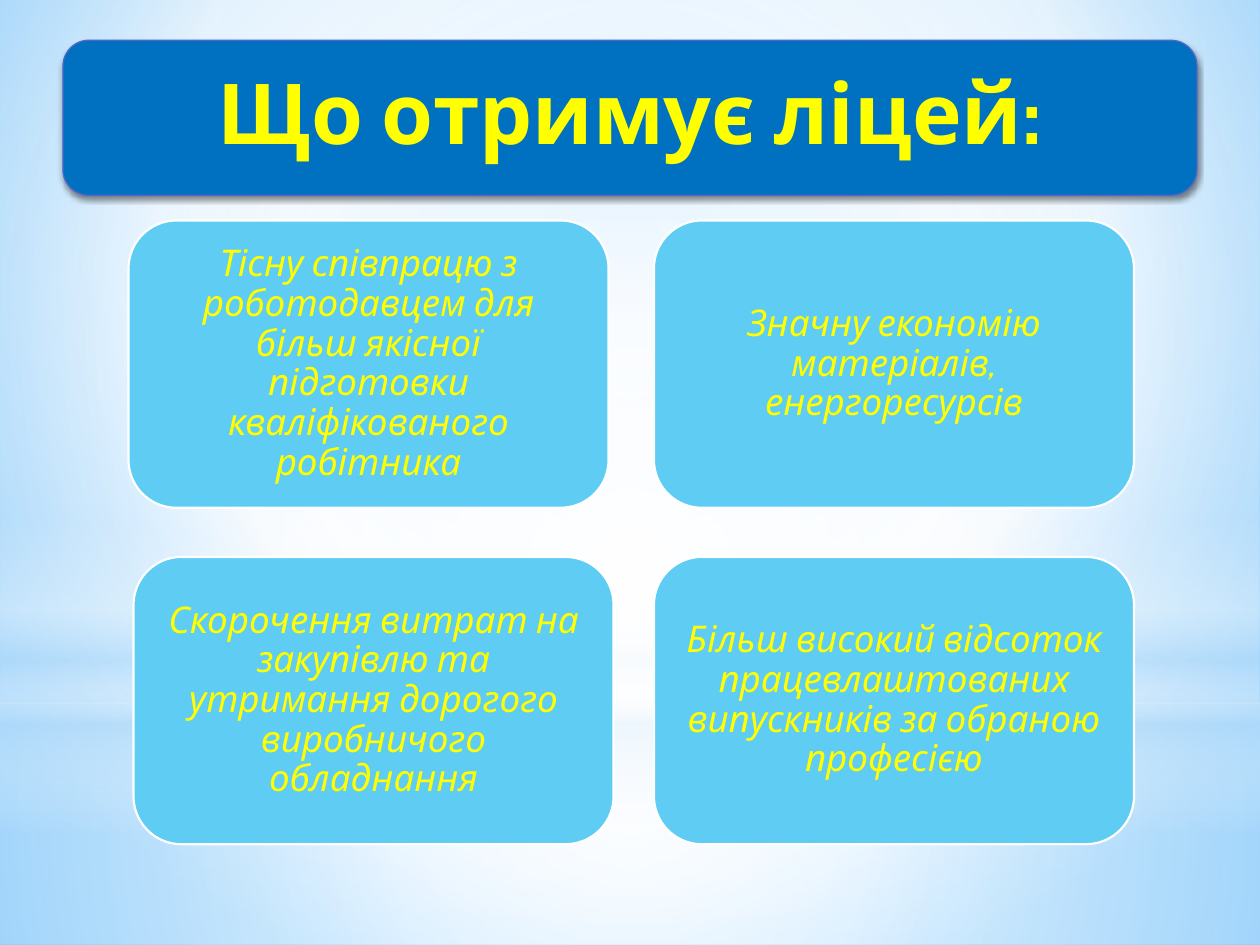
import pptx
import pptx.dml.color
import pptx.enum.shapes
import pptx.enum.text
import pptx.oxml
import pptx.oxml.ns
import pptx.util

RGBColor = pptx.dml.color.RGBColor
Shape = pptx.enum.shapes.MSO_SHAPE

BLUE = RGBColor(0x00, 0x70, 0xC0)
INDIGO = RGBColor(0x4E, 0x67, 0xC8)
SKY = RGBColor(0x5E, 0xCC, 0xF3)
YELLOW = RGBColor(0xFF, 0xFF, 0x00)
WHITE = RGBColor(0xFF, 0xFF, 0xFF)
HAZE = RGBColor(0xB4, 0xDC, 0xFA)
PALE_BLUE = RGBColor(0x9E, 0xD5, 0xFF)
BRIGHT_BLUE = RGBColor(0x5B, 0xB9, 0xFF)

COLUMNS, ROWS = 40, 30
CENTRE = '<a:path path="circle"><a:fillToRect l="50000" t="50000" r="50000" b="50000"/></a:path>'
UPPER = '<a:path path="circle"><a:fillToRect l="20000" t="10000" r="20000" b="60000"/></a:path>'
DOWNWARD = '<a:lin ang="5400000" scaled="0"/>'

GLOWS = [
    (Shape.RECTANGLE, (0, 22.32, 40, 7.68), CENTRE,
     [(0, WHITE, 91), (37, WHITE, 76), (100, HAZE, 79)]),
    (Shape.RECTANGLE, (0, 0, 40, 22.32), CENTRE,
     [(0, WHITE, 89), (48, WHITE, 62), (100, HAZE, 79)]),
    (Shape.RECTANGLE, (0, 16.48, 40, 10), DOWNWARD,
     [(0, WHITE, 0), (29, WHITE, 30), (45, HAZE, 40),
      (55, WHITE, 26), (65, HAZE, 60), (100, WHITE, 0)]),
    (Shape.OVAL, (0, 7, 40, 22.32), CENTRE, [(0, WHITE, 100), (56, WHITE, 0)]),
]

BENEFITS = [
    [(4.08, "Тісну співпрацю з роботодавцем для більш якісної підготовки кваліфікованого робітника"),
     (20.76, "Значну економію матеріалів, енергоресурсів")],
    [(4.24, "Скорочення витрат на закупівлю та утримання дорогого виробничого обладнання"),
     (20.76, "Більш високий відсоток працевлаштованих випускників за обраною професією")],
]
CARD_WIDTH, CARD_HEIGHT = 15.24, 9.12
FIRST_ROW, ROW_PITCH = 7, 10.68


class SlideBuilder:
    """Draws styled elements on one slide, placed in grid columns and rows."""

    font_name = "Cabin"

    def __init__(self, presentation):
        self.slide = presentation.slides.add_slide(presentation.slide_layouts[6])
        self.column = presentation.slide_width / COLUMNS
        self.row = presentation.slide_height / ROWS

    def add_shape(self, kind, box):
        left, top, width, height = box
        shape = self.slide.shapes.add_shape(
            kind, round(left * self.column), round(top * self.row),
            round(width * self.column), round(height * self.row))
        shape.shadow.inherit = False
        return shape

    def apply_gradient(self, fill, element, direction, stops):
        fill.background()
        stop_list = "".join(
            f'<a:gs pos="{position * 1000}"><a:srgbClr val="{color}">'
            f'<a:alpha val="{opacity * 1000}"/></a:srgbClr></a:gs>'
            for position, color, opacity in stops)
        gradient = pptx.oxml.parse_xml(
            f'<a:gradFill {pptx.oxml.ns.nsdecls("a")} rotWithShape="1">'
            f'<a:gsLst>{stop_list}</a:gsLst>{direction}</a:gradFill>')
        empty_fill = element.xpath(".//a:noFill")[0]
        empty_fill.getparent().replace(empty_fill, gradient)

    def set_background(self, direction, stops):
        self.apply_gradient(self.slide.background.fill, self.slide.element, direction, stops)

    def add_glow(self, kind, box, direction, stops):
        shape = self.add_shape(kind, box)
        self.apply_gradient(shape.fill, shape.element, direction, stops)
        shape.line.fill.background()

    def add_panel(self, kind, box, text, fill, line, line_width, size, inset):
        shape = self.add_shape(kind, box)
        shape.fill.solid()
        shape.fill.fore_color.rgb = fill
        shape.line.color.rgb = line
        shape.line.width = pptx.util.Pt(line_width)
        frame = shape.text_frame
        frame.word_wrap = True
        frame.vertical_anchor = pptx.enum.text.MSO_ANCHOR.MIDDLE
        frame.margin_left = frame.margin_right = pptx.util.Inches(inset)
        frame.margin_top = frame.margin_bottom = pptx.util.Inches(inset)
        paragraph = frame.paragraphs[0]
        paragraph.text = text
        paragraph.alignment = pptx.enum.text.PP_ALIGN.CENTER
        paragraph.line_spacing = 0.9
        paragraph.font.name = self.font_name
        paragraph.font.size = pptx.util.Pt(size)
        paragraph.font.color.rgb = YELLOW
        return shape

    def add_title(self, box, text):
        shape = self.add_panel(Shape.ROUNDED_RECTANGLE, box, text, BLUE, INDIGO, 0.75, 48, 0.2)
        shape.text_frame.paragraphs[0].font.bold = True
        shadow = pptx.oxml.parse_xml(
            f'<a:outerShdw {pptx.oxml.ns.nsdecls("a")} blurRad="{pptx.util.Pt(3.1)}" '
            f'dist="{pptx.util.Pt(1.8)}" dir="5400000" rotWithShape="0">'
            '<a:srgbClr val="000000"><a:alpha val="45000"/></a:srgbClr></a:outerShdw>')
        shape.element.xpath(".//a:effectLst")[0].append(shadow)

    def add_card(self, box, text):
        shape = self.add_panel(
            Shape.FLOWCHART_ALTERNATE_PROCESS, box, text, SKY, WHITE, 1.25, 21, 0.09)
        shape.text_frame.paragraphs[0].font.italic = True


def main():
    presentation = pptx.Presentation()
    presentation.slide_width = pptx.util.Inches(10)
    presentation.slide_height = pptx.util.Inches(7.5)
    builder = SlideBuilder(presentation)
    builder.set_background(UPPER, [(0, PALE_BLUE, 100), (60, WHITE, 100), (100, BRIGHT_BLUE, 100)])
    for glow in GLOWS:
        builder.add_glow(*glow)
    builder.add_title((2, 1.28, 36, 4.92), "Що отримує ліцей:")
    for index, cards in enumerate(BENEFITS):
        for left, text in cards:
            top = FIRST_ROW + index * ROW_PITCH
            builder.add_card((left, top, CARD_WIDTH, CARD_HEIGHT), text)
    presentation.save("out.pptx")


if __name__ == "__main__":
    main()
